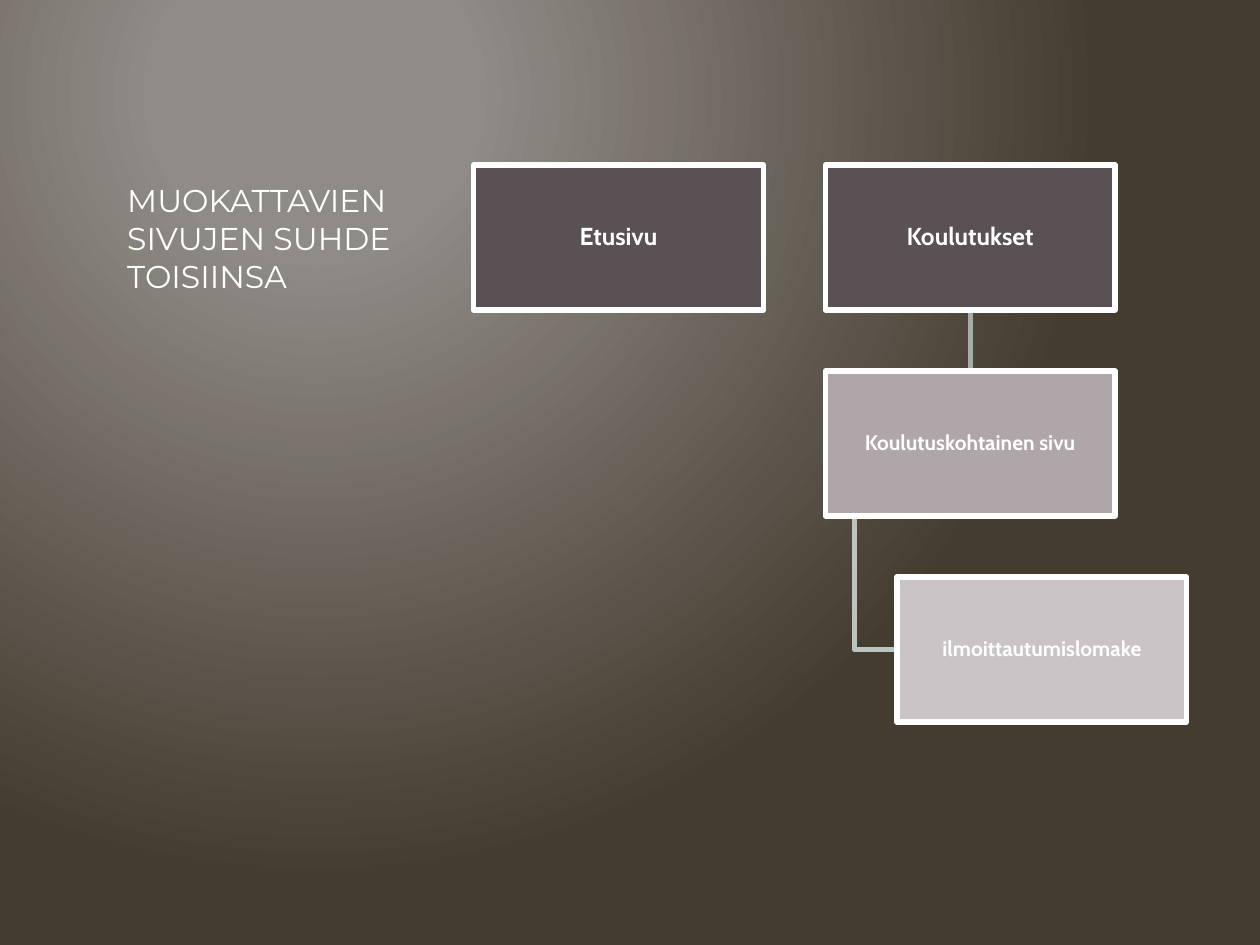
import pptx
import pptx.util
import pptx.dml.color
import pptx.enum.shapes
import pptx.enum.text
import pptx.oxml
import pptx.oxml.ns
from pptx.util import Inches

BOX_WIDTH, BOX_HEIGHT = 2.3, 1.15
ROW_TOP, ROW_STEP = 1.31, 1.635
HOME_LEFT, COURSES_LEFT, FORM_LEFT = 3.76, 6.55, 7.12
TRUNK_LEFT = 6.78
LINE_WIDTH = 3.03
WHITE = "FFFFFF"

# label, left, row, fill, text size
PAGES = [
    ("Etusivu", HOME_LEFT, 0, "5A5155", 14),
    ("Koulutukset", COURSES_LEFT, 0, "5A5155", 14),
    ("Koulutuskohtainen sivu", COURSES_LEFT, 1, "AFA6AA", 12),
    ("ilmoittautumislomake", FORM_LEFT, 2, "CAC4C6", 12),
]


def color(value):
    return pptx.dml.color.RGBColor.from_string(value)


def row_top(row):
    return ROW_TOP + row * ROW_STEP


def set_values(target, values):
    for name, value in values.items():
        setattr(target, name, value)


def style_line(line, value):
    line.color.rgb = color(value)
    line.width = pptx.util.Pt(LINE_WIDTH)


def write_text(frame, text, size, font, bold, frame_values, para_values):
    set_values(frame, frame_values)
    para = frame.paragraphs[0]
    set_values(para, para_values)
    span = para.add_run()
    span.text = text
    set_values(span.font, {"name": font, "size": pptx.util.Pt(size), "bold": bold})
    span.font.color.rgb = color(WHITE)


def paint_background(page):
    fill = page.background.fill
    fill.gradient()
    for stop, (position, value) in zip(fill.gradient_stops, [(0.2, "8F8B86"), (1, "453C30")]):
        stop.position = position
        stop.color.rgb = color(value)
    # Turn the linear gradient into a circular one
    linear = page.background._cSld.find(".//" + pptx.oxml.ns.qn("a:lin"))
    circle = pptx.oxml.parse_xml(
        f'<a:path {pptx.oxml.ns.nsdecls("a")} path="circle">'
        '<a:fillToRect l="50000" t="20000" r="100000" b="100000"/></a:path>')
    linear.getparent().replace(linear, circle)


def add_title(page, text):
    title = page.shapes.title
    set_values(title, {"left": Inches(0.91), "top": Inches(1.39),
                       "width": Inches(2.52), "height": Inches(2.16)})
    write_text(title.text_frame, text, 18, "Montserrat", False,
               {"vertical_anchor": pptx.enum.text.MSO_ANCHOR.TOP, "word_wrap": True,
                "auto_size": pptx.enum.text.MSO_AUTO_SIZE.NONE},
               {"alignment": pptx.enum.text.PP_ALIGN.LEFT})


def add_straight_link(page, x, top, bottom, value):
    link = page.shapes.add_connector(
        pptx.enum.shapes.MSO_CONNECTOR.STRAIGHT,
        Inches(x), Inches(top), Inches(x), Inches(bottom))
    style_line(link.line, value)
    link._element.spPr.append(
        pptx.oxml.parse_xml(f'<a:effectLst {pptx.oxml.ns.nsdecls("a")}/>'))
    return link


def add_corner_link(page, points, value):
    start, *rest = [(Inches(x), Inches(y)) for x, y in points]
    builder = page.shapes.build_freeform(*start)
    builder.add_line_segments(rest, close=False)
    link = builder.convert_to_shape()
    link.shadow.inherit = False
    link.fill.background()
    style_line(link.line, value)


def add_box(page, text, left, row, fill, size):
    box = page.shapes.add_shape(
        pptx.enum.shapes.MSO_SHAPE.RECTANGLE, Inches(left), Inches(row_top(row)),
        Inches(BOX_WIDTH), Inches(BOX_HEIGHT))
    box.shadow.inherit = False
    box.fill.solid()
    box.fill.fore_color.rgb = color(fill)
    style_line(box.line, WHITE)
    margins = {f"margin_{side}": Inches(0.01) for side in ("left", "top", "right", "bottom")}
    write_text(box.text_frame, text, size, "Cabin", True,
               {"vertical_anchor": pptx.enum.text.MSO_ANCHOR.MIDDLE, "word_wrap": True, **margins},
               {"alignment": pptx.enum.text.PP_ALIGN.CENTER, "line_spacing": 0.9})
    return box


def main():
    deck = pptx.Presentation()
    deck.slide_width, deck.slide_height = Inches(10), Inches(7.5)
    page = deck.slides.add_slide(deck.slide_layouts[5])
    paint_background(page)
    add_title(page, "MUOKATTAVIEN SIVUJEN SUHDE TOISIINSA")

    # Links lie behind the boxes
    form_middle = row_top(2) + BOX_HEIGHT / 2
    add_corner_link(page, [(TRUNK_LEFT, row_top(1) + BOX_HEIGHT),
                           (TRUNK_LEFT, form_middle), (FORM_LEFT, form_middle)], "BCC4BF")
    link = add_straight_link(page, COURSES_LEFT + BOX_WIDTH / 2,
                             row_top(0) + BOX_HEIGHT, row_top(1), "A2AEA7")

    # Page boxes
    boxes = {entry[0]: add_box(page, *entry) for entry in PAGES}
    link.begin_connect(boxes["Koulutukset"], 2)
    link.end_connect(boxes["Koulutuskohtainen sivu"], 0)

    deck.save("out.pptx")


if __name__ == "__main__":
    main()
